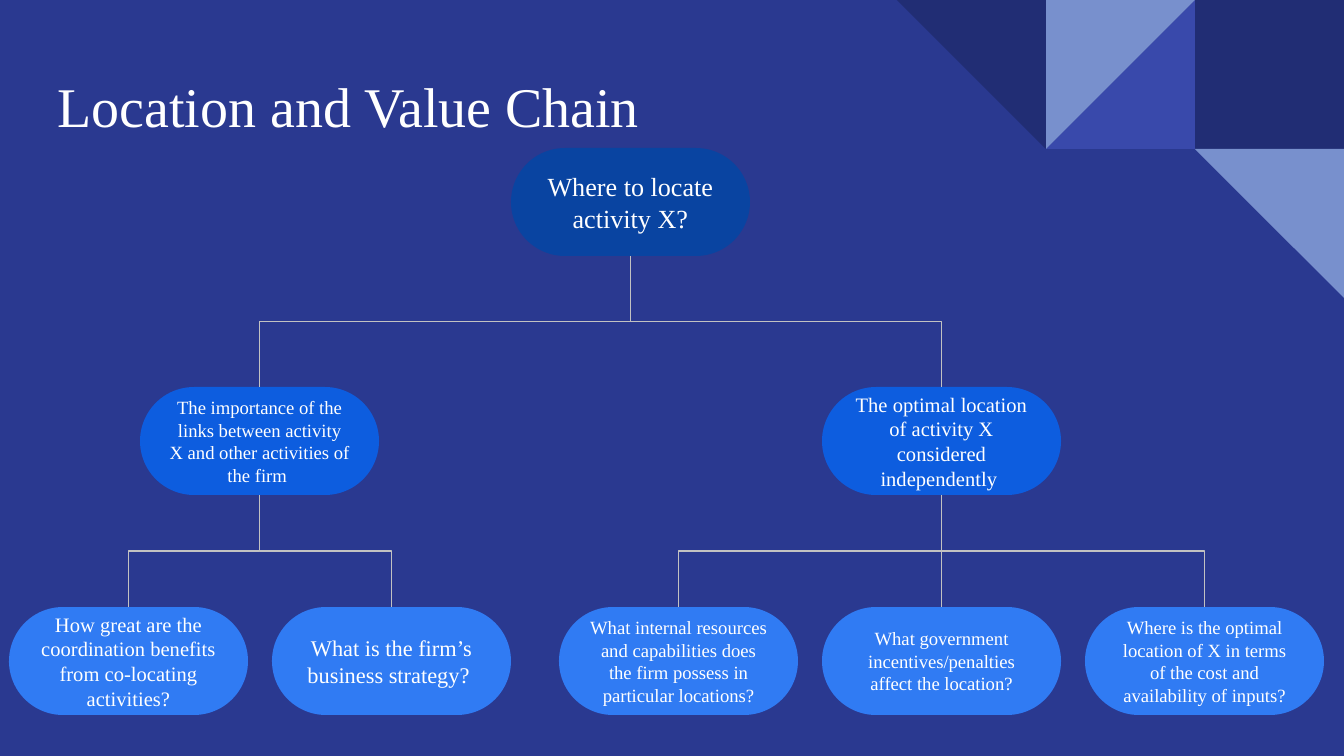
from dataclasses import dataclass

from lxml.etree import SubElement
from pptx import Presentation
from pptx.dml.color import RGBColor
from pptx.enum.shapes import MSO_CONNECTOR as CONNECTOR, MSO_SHAPE as SHAPE
from pptx.enum.text import MSO_ANCHOR as ANCHOR, MSO_AUTO_SIZE as AUTO_SIZE, PP_ALIGN as ALIGN
from pptx.oxml.ns import qn
from pptx.util import Emu, Inches, Pt


@dataclass(frozen=True)
class Theme:
    font: str = "Times New Roman"
    background: str = "2A3990"
    text: str = "FFFFFF"
    line: str = "C2C2C2"
    root: str = "0944A1"
    branch: str = "0D5DDF"
    leaf: str = "307BF3"
    tile_dark: str = "212D74"
    tile_mid: str = "3949AB"
    tile_light: str = "7890CD"
    title_size: int = 30
    root_size: int = 14
    large: int = 12
    medium: int = 11
    small: int = 10


THEME = Theme()
SLIDE_W, SLIDE_H = 1344, 756
TILE = 149
NODE_W, NODE_H = 239, 108
ROOT_LEFT, ROOT_TOP, BRANCH_TOP, LEAF_TOP = 511, 148, 387, 607
LEAF_STEP = 263

ROOT_TEXT = "Where to locate activity X?"
# Each branch: text, size, left of its first leaf, leaves as (text, size)
BRANCHES = [
    ("The importance of the links between activity X and other activities of the firm ",
     THEME.small, 9, [
         ("How great are the coordination benefits from co-locating activities?", THEME.medium),
         ("What is the firm’s business strategy? ", THEME.large),
     ]),
    ("The optimal location of activity X considered independently ",
     THEME.medium, 559, [
         ("What internal resources and capabilities does the firm possess in particular locations?",
          THEME.small),
         ("What government incentives/penalties affect the location?", THEME.small),
         ("Where is the optimal location of X in terms of the cost and availability of inputs?",
          THEME.small),
     ]),
]


def px(n):
    return Emu(round(n * 914400 / 134.4))


def rgb(color):
    return RGBColor.from_string(color)


def set_text(s, text, size, align):
    tf = s.text_frame
    tf.text = text
    tf.word_wrap = True
    tf.auto_size = AUTO_SIZE.NONE
    tf.vertical_anchor = ANCHOR.MIDDLE
    tf.margin_left = tf.margin_right = tf.margin_top = tf.margin_bottom = Inches(0.1)
    p = tf.paragraphs[0]
    p.alignment = align
    font = p.runs[0].font
    font.name, font.size = THEME.font, Pt(size)
    font.color.rgb = rgb(THEME.text)
    return p


def add_filled(slide, kind, left, top, width, height, color):
    sp = slide.shapes.add_shape(kind, px(left), px(top), px(width), px(height))
    sp.shadow.inherit = False
    sp.fill.solid()
    sp.fill.fore_color.rgb = rgb(color)
    sp.line.fill.background()
    return sp


def add_corner_tiles(slide):
    tiles = [  # column from the right edge, row, kind, rotation, color
        (1, 0, SHAPE.RECTANGLE, 0, THEME.tile_dark),
        (2, 0, SHAPE.RIGHT_TRIANGLE, 270, THEME.tile_mid),
        (2, 0, SHAPE.RIGHT_TRIANGLE, 90, THEME.tile_light),
        (3, 0, SHAPE.RIGHT_TRIANGLE, 180, THEME.tile_dark),
        (1, 1, SHAPE.RIGHT_TRIANGLE, 180, THEME.tile_light),
    ]
    for col, row, kind, rotation, color in tiles:
        sp = add_filled(slide, kind, SLIDE_W - col * TILE, row * TILE, TILE, TILE, color)
        sp.rotation = rotation


def add_title(slide, text):
    title = slide.shapes.title
    title.left, title.top, title.width, title.height = px(-23), px(43), px(814), px(124)
    p = set_text(title, text, THEME.title_size, ALIGN.LEFT)
    p._p.get_or_add_pPr().set("indent", str(Inches(0.5)))


def add_node(slide, left, top, text, size, color):
    sp = add_filled(slide, SHAPE.ROUNDED_RECTANGLE, left, top, NODE_W, NODE_H, color)
    sp.adjustments[0] = 0.5
    set_text(sp, text, size, ALIGN.CENTER)
    return sp


def join(slide, parent, child):
    """Link parent's bottom to child's top, leaving and arriving vertically."""
    x1, y1 = parent.left + parent.width // 2, parent.top + parent.height
    x2, y2 = child.left + child.width // 2, child.top
    dx, dy = x2 - x1, y2 - y1
    kind = CONNECTOR.ELBOW if dx else CONNECTOR.STRAIGHT
    line = slide.shapes.add_connector(kind, x1, y1, x2, y2)
    line.begin_connect(parent, 2)
    line.end_connect(child, 0)
    line.line.color.rgb = rgb(THEME.line)
    line.line.width = Pt(0.75)
    sp_pr = line._element.spPr
    SubElement(sp_pr, qn("a:effectLst"))
    if dx:
        # An elbow runs sideways first, so turn its frame by a quarter.
        line.width, line.height = Emu(dy), Emu(abs(dx))
        line.left = Emu((x1 + x2 - dy) // 2)
        line.top = Emu((y1 + y2 - abs(dx)) // 2)
        xfrm = sp_pr.find(qn("a:xfrm"))
        xfrm.set("rot", "16200000" if dx > 0 else "5400000")
        xfrm.set("flipH", "1" if dx > 0 else "0")


def add_branch(slide, root, text, size, first_left, leaves):
    middle = first_left + LEAF_STEP * (len(leaves) - 1) // 2
    branch = add_node(slide, middle, BRANCH_TOP, text, size, THEME.branch)
    join(slide, root, branch)
    for i, (leaf_text, leaf_size) in enumerate(leaves):
        leaf = add_node(slide, first_left + i * LEAF_STEP, LEAF_TOP,
                        leaf_text, leaf_size, THEME.leaf)
        join(slide, branch, leaf)


def main():
    prs = Presentation()
    prs.slide_width, prs.slide_height = px(SLIDE_W), px(SLIDE_H)
    slide = prs.slides.add_slide(prs.slide_layouts[5])
    slide.background.fill.solid()
    slide.background.fill.fore_color.rgb = rgb(THEME.background)
    add_corner_tiles(slide)
    add_title(slide, "Location and Value Chain")
    root = add_node(slide, ROOT_LEFT, ROOT_TOP, ROOT_TEXT, THEME.root_size, THEME.root)
    for branch in BRANCHES:
        add_branch(slide, root, *branch)
    prs.save("out.pptx")


if __name__ == "__main__":
    main()
